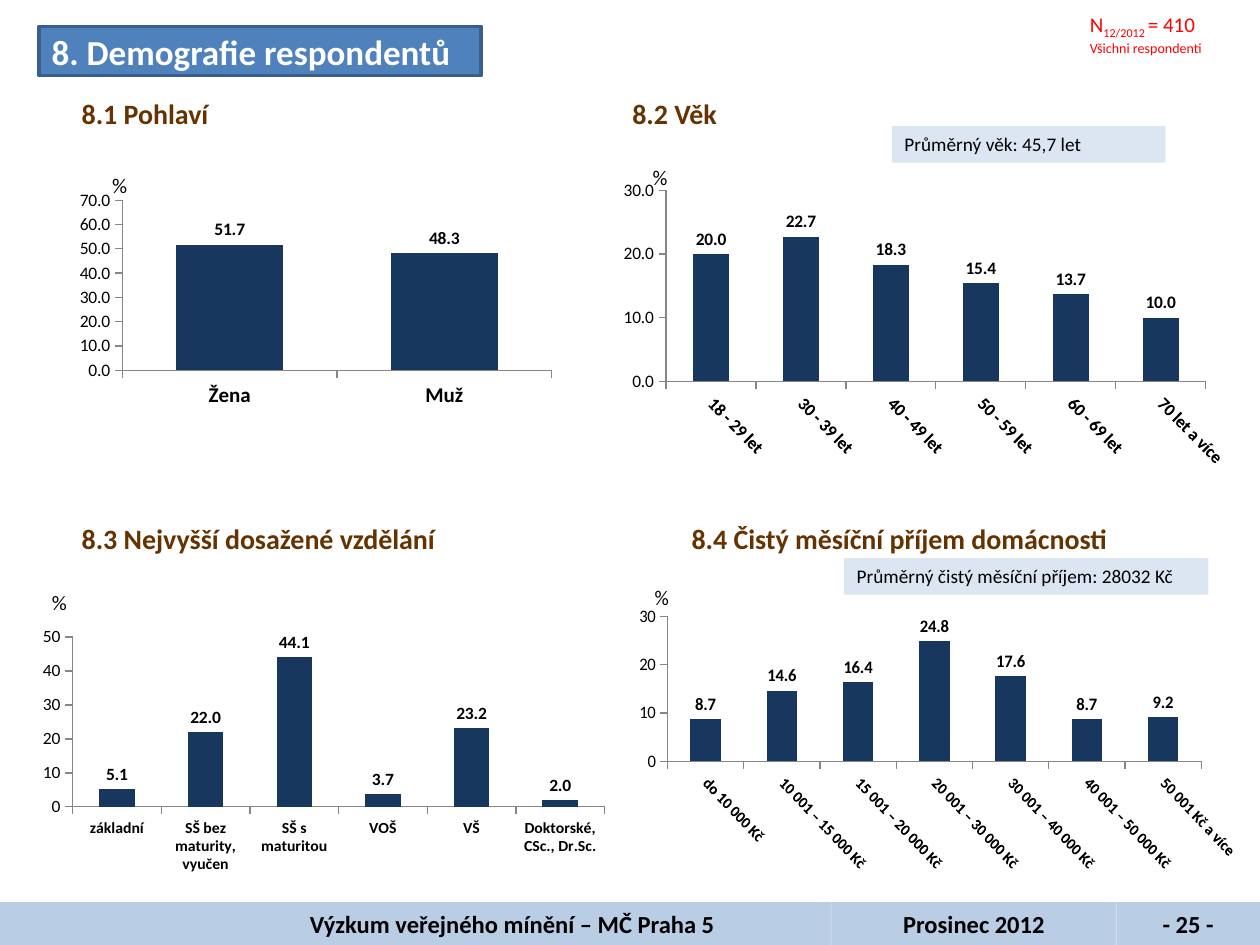
from lxml import etree
from pptx import Presentation
from pptx.chart.data import CategoryChartData
from pptx.dml.color import RGBColor
from pptx.enum.chart import XL_CHART_TYPE as CT, XL_LABEL_POSITION as LP, XL_TICK_MARK as TM
from pptx.enum.shapes import MSO_SHAPE
from pptx.enum.text import MSO_ANCHOR as MA, MSO_AUTO_SIZE, PP_ALIGN as AL
from pptx.oxml import parse_xml
from pptx.oxml.ns import nsdecls, qn
from pptx.util import Inches, Pt

FONT = "Calibri"
BLACK, WHITE = RGBColor(0, 0, 0), RGBColor(255, 255, 255)
NAVY, BROWN = RGBColor(0x17, 0x37, 0x5E), RGBColor(0x66, 0x33, 0x00)
BLUE, EDGE = RGBColor(0x4F, 0x81, 0xBD), RGBColor(0x3A, 0x5F, 0x8C)
BAND, PALE = RGBColor(0xB9, 0xCD, 0xE5), RGBColor(0xDC, 0xE6, 0xF2)
RED, GRAY = RGBColor(255, 0, 0), RGBColor(0x86, 0x86, 0x86)
W, H = 10, 7.5

# Content: text runs are (text, size, baseline)
TITLE = "8. Demografie respondentů"
SAMPLE = [[("N", 12, 0), ("12/2012 ", 12, -25), ("= 410", 12, 0)],
          [("Všichni respondenti", 8, 0)]]
# text, width, left inset
FOOTER = [("Výzkum veřejného mínění – MČ Praha 5", 6.6, 1.63),
          ("Prosinec 2012", 2.26, 0.1), ("- 25 -", 1.14, 0.1)]
HEADINGS = [("8.1 Pohlaví", 0.55, 0.72, 1.46), ("8.2 Věk", 4.92, 0.72, 3.92),
            ("8.3 Nejvyšší dosažené vzdělání", 0.55, 4.09, 3.27),
            ("8.4 Čistý měsíční příjem domácnosti", 5.39, 4.09, 3.94)]
AVERAGES = [("Průměrný věk: 45,7 let", 7.08, 1, 2.17),
            ("Průměrný čistý měsíční příjem: 28032 Kč", 6.7, 4.43, 2.89)]
# "plot" holds shares of the chart, "unit" the centre of the % sign on the slide
CHARTS = [
    dict(box=(0.55, 0.87, 3.98, 2.58), plot=(0.106, 0.279, 0.856, 0.523), unit=(0.93, 1.43),
         top=70, fmt="0.0", gap=100, size=12, turn=0,
         data=[("Žena", 51.7), ("Muž", 48.3)]),
    dict(box=(4.95, 0.99, 4.87, 3.03), plot=(0.061, 0.172, 0.887, 0.5), unit=(5.18, 1.37),
         top=30, fmt="0.0", gap=150, size=10, turn=45,
         data=[("18 - 29 let", 20), ("30 - 39 let", 22.7), ("40 - 49 let", 18.3),
               ("50 - 59 let", 15.4), ("60 - 69 let", 13.7), ("70 let a více", 10)]),
    dict(box=(0.2, 4.06, 4.65, 2.87), plot=(0.081, 0.354, 0.908, 0.478), unit=(0.45, 4.75),
         top=50, fmt="0", gap=150, size=9, turn=0,
         data=[("základní", 5.1), ("SŠ bez maturity, vyučen", 22), ("SŠ s maturitou", 44.1),
               ("VOŠ", 3.7), ("VŠ", 23.2), ("Doktorské, CSc., Dr.Sc.", 2)]),
    dict(box=(4.92, 3.89, 4.91, 3.09), plot=(0.081, 0.324, 0.908, 0.373), unit=(5.25, 4.7),
         top=30, fmt="0", gap=150, size=9, turn=45,
         data=[("do 10 000 Kč", 8.7), ("10 001 – 15 000 Kč", 14.6),
               ("15 001 – 20 000 Kč", 16.4), ("20 001 – 30 000 Kč", 24.8),
               ("30 001 – 40 000 Kč", 17.6), ("40 001 – 50 000 Kč", 8.7),
               ("50 001 Kč a více", 9.2)]),
]


def set_font(f, size, color=BLACK, bold=False):
    f.name, f.size, f.bold = FONT, Pt(size), bold
    f.color.rgb = color


def write(s, text, size=12, color=BLACK, bold=False, align=AL.LEFT, anchor=MA.TOP,
          inset=(0.1, 0.05, 0.1, 0.05)):
    """Fill a shape with a string, or with paragraphs given as lists of runs."""
    tf = s.text_frame
    tf.word_wrap, tf.auto_size, tf.vertical_anchor = True, MSO_AUTO_SIZE.NONE, anchor
    tf.margin_left, tf.margin_top, tf.margin_right, tf.margin_bottom = map(Inches, inset)
    paragraphs = [[(text, size, 0)]] if isinstance(text, str) else text
    for i, runs in enumerate(paragraphs):
        p = tf.add_paragraph() if i else tf.paragraphs[0]
        p.alignment = align
        for words, run_size, base in runs:
            r = p.add_run()
            r.text = words
            set_font(r.font, run_size, color, bold)
            if base:
                r._r.get_or_add_rPr().set("baseline", str(base * 1000))


def add_box(box, fill=None):
    box = map(Inches, box)
    if fill is None:
        return slide.shapes.add_textbox(*box)
    s = slide.shapes.add_shape(MSO_SHAPE.RECTANGLE, *box)
    s.shadow.inherit = False
    s.fill.solid()
    s.fill.fore_color.rgb = fill
    s.line.fill.background()
    return s


def set_layout(parent, index, inner=False, **shares):
    """Fix the place of a chart part by shares of the chart's size."""
    for old in parent.findall(qn("c:layout")):
        parent.remove(old)
    values = [("layoutTarget", "inner")] if inner else []
    values += [("xMode", "edge"), ("yMode", "edge")]
    values += [(k, f"{v:.3f}") for k, v in shares.items()]
    layout = parse_xml(f"<c:layout {nsdecls('c')}><c:manualLayout/></c:layout>")
    for name, value in values:
        etree.SubElement(layout[0], qn(f"c:{name}")).set("val", value)
    parent.insert(index, layout)


def add_column_chart(box, plot, unit, top, fmt, gap, size, turn, data):
    cd = CategoryChartData(number_format="0.0")
    cd.categories = [name for name, _ in data]
    cd.add_series("%", [value for _, value in data])
    chart = slide.shapes.add_chart(CT.COLUMN_CLUSTERED, *map(Inches, box), cd).chart
    set_font(chart.font, 10)
    chart.has_legend = False

    # Percent sign as chart title
    chart.has_title = True
    title = chart.chart_title
    r = title.text_frame.paragraphs[0].add_run()
    r.text = "%"
    set_font(r.font, 12)
    x, y, w, h = box
    set_layout(title._element, 1, x=(unit[0] - 0.07 - x) / w, y=(unit[1] - 0.1 - y) / h)
    set_layout(chart._chartSpace.chart.plotArea, 0, inner=True, **dict(zip("xywh", plot)))

    # Axes
    cat, val = chart.category_axis, chart.value_axis
    for axis in (cat, val):
        axis.has_major_gridlines = False
        axis.major_tick_mark, axis.minor_tick_mark = TM.OUTSIDE, TM.NONE
        axis.format.line.color.rgb = GRAY
    set_font(cat.tick_labels.font, size, bold=True)
    set_font(val.tick_labels.font, 10)
    if turn:
        cat._element.find(qn("c:txPr")).find(qn("a:bodyPr")).set("rot", str(turn * 60000))
    val.minimum_scale, val.maximum_scale, val.major_unit = 0, top, 10
    val.tick_labels.number_format, val.tick_labels.number_format_is_linked = fmt, False

    # Columns and their values
    bars = chart.plots[0]
    bars.gap_width, bars.vary_by_categories = gap, False
    fill = bars.series[0].format.fill
    fill.solid()
    fill.fore_color.rgb = NAVY
    bars.has_data_labels = True
    labels = bars.data_labels
    labels.show_value, labels.position = True, LP.OUTSIDE_END
    labels.number_format, labels.number_format_is_linked = "0.0", False
    set_font(labels.font, 10, bold=True)


prs = Presentation()
prs.slide_width, prs.slide_height = Inches(W), Inches(H)
slide = prs.slides.add_slide(prs.slide_layouts[5])

# Footer band
left = 0
for text, width, inset in FOOTER:
    write(add_box((left, 7.16, width, H - 7.16), BAND), text, size=14, bold=True,
          align=AL.CENTER, anchor=MA.MIDDLE, inset=(inset, 0.05, 0.1, 0.05))
    left += width

# Charts, their headings and averages
for chart_spec in CHARTS:
    add_column_chart(**chart_spec)
for text, x, y, w in HEADINGS:
    write(add_box((x, y, w, 0.37)), text, size=16, color=BROWN, bold=True)
for text, x, y, w in AVERAGES:
    write(add_box((x, y, w, 0.29), PALE), text, size=11)

# Title in a rounded frame
title = slide.shapes.title
title.left, title.top, title.width, title.height = map(Inches, (0.31, 0.21, 3.51, 0.39))
title._element.spPr.append(parse_xml(
    f'<a:prstGeom {nsdecls("a")} prst="roundRect"><a:avLst/></a:prstGeom>'))
title.fill.solid()
title.fill.fore_color.rgb = BLUE
title.line.color.rgb, title.line.width = EDGE, Pt(2)
write(title, TITLE, size=20, color=WHITE, bold=True, anchor=MA.MIDDLE)

# Sample size
write(add_box((8.61, 0.05, 1.35, 0.42)), SAMPLE, color=RED, inset=(0.04,) * 4)

prs.save("out.pptx")
